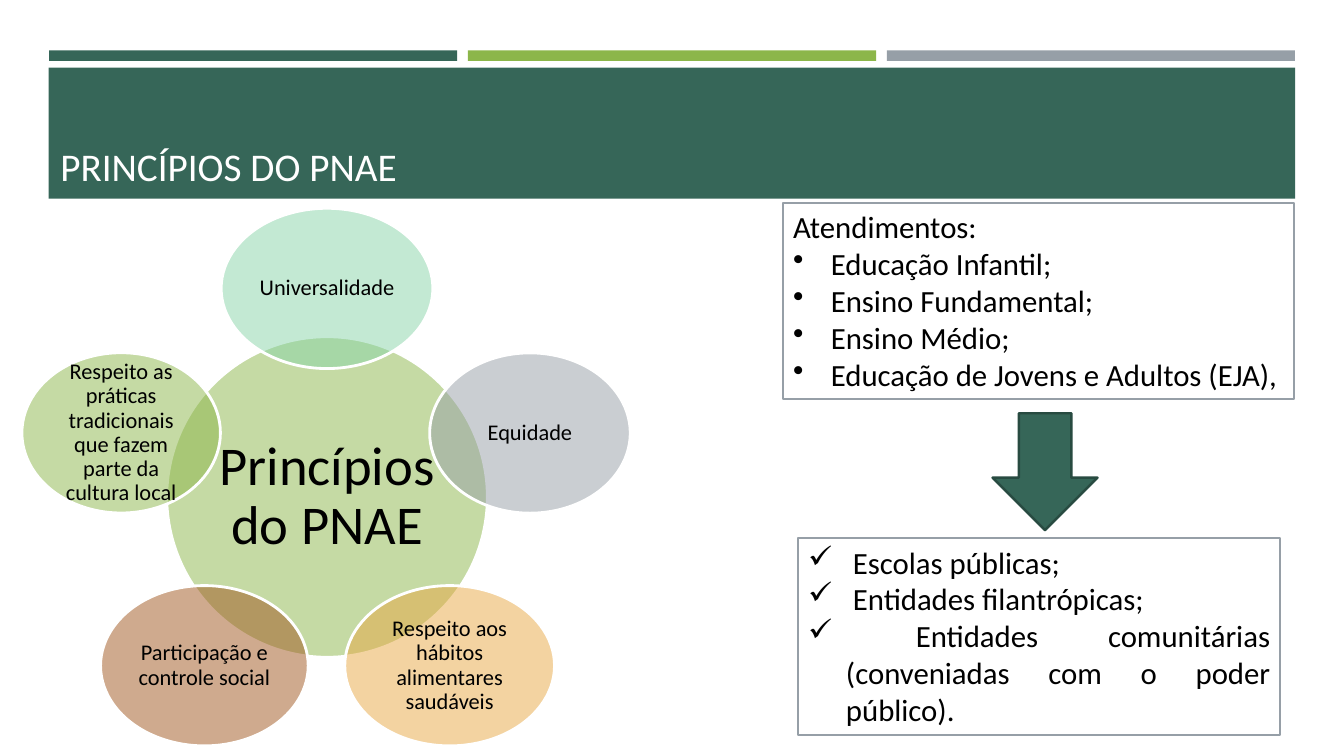
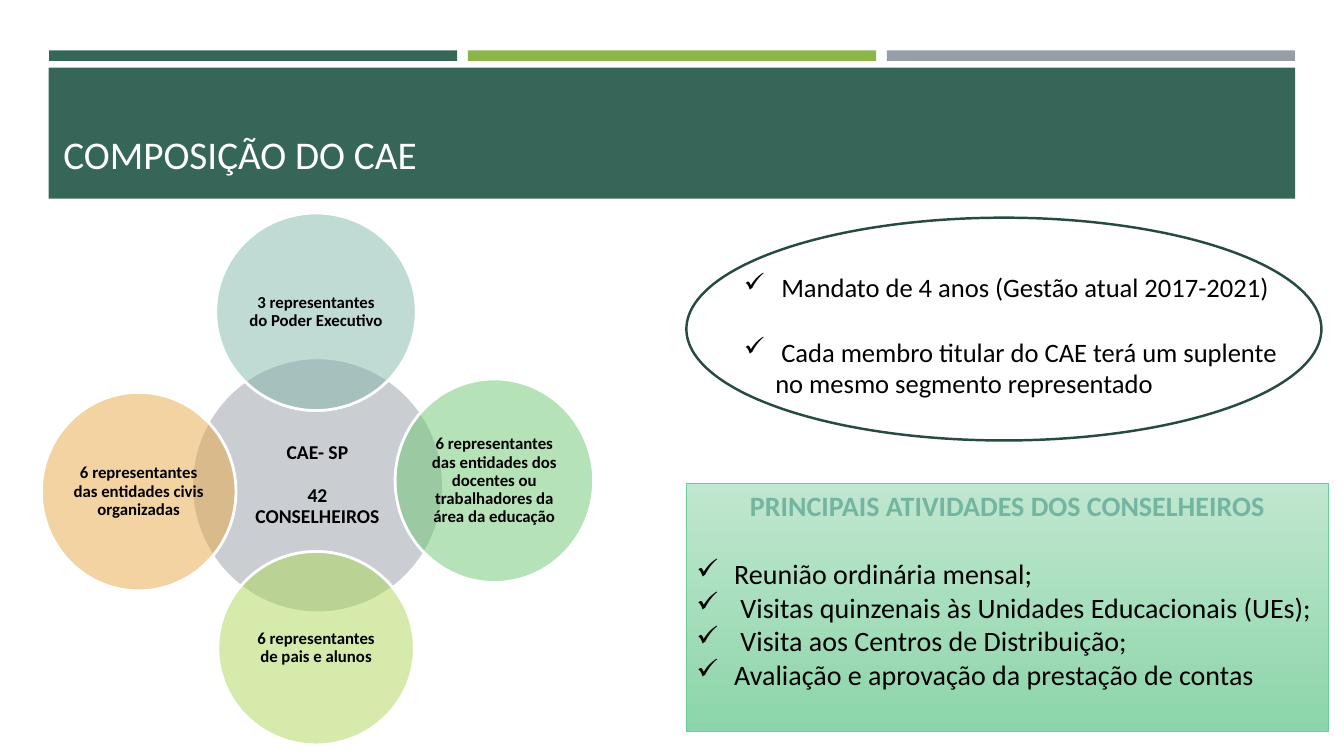
from math import cos, radians, sin

from lxml import etree
from pptx import Presentation
from pptx.dml.color import RGBColor
from pptx.enum import shapes, text
from pptx.oxml.ns import qn
from pptx.util import Pt

GREEN = RGBColor(0x36, 0x66, 0x58)
DARK_GREEN = RGBColor(0x28, 0x4B, 0x41)
LIME = RGBColor(0x8C, 0xB6, 0x4A)
LIGHT_LIME = RGBColor(0xAE, 0xD7, 0x5A)
GRAY = RGBColor(0x96, 0x9F, 0xA7)
MINT = RGBColor(0x88, 0xD5, 0xA9)
TEAL = RGBColor(0x83, 0xB6, 0xAA)
LEAF = RGBColor(0x6E, 0xC6, 0x72)
AMBER = RGBColor(0xE8, 0xA8, 0x44)
BROWN = RGBColor(0xA1, 0x56, 0x1F)
PALE_MINT = RGBColor(0xC0, 0xE7, 0xCF)
SOFT_MINT = RGBColor(0x8C, 0xD5, 0xAA)
MINT_EDGE = RGBColor(0x6E, 0xCC, 0x96)
HEADING_TEAL = RGBColor(0x74, 0xB5, 0xA2)
WHITE = RGBColor(0xFF, 0xFF, 0xFF)
BLACK = RGBColor(0, 0, 0)

FONT = "Calibri"
DOT, CHECK = "•", "✓"
RECT, OVAL = shapes.MSO_SHAPE.RECTANGLE, shapes.MSO_SHAPE.OVAL
ALIGN = text.PP_ALIGN

# Satellites: text, colour, clockwise angle from the top, distance, width, height
PRINCIPLES = dict(
    center=(233.6, 355), hub=("Princípios do PNAE", LIME, 229, 229), hub_size=39,
    size=16, bold=False, hub_gap=0,
    satellites=[
        ("Universalidade", MINT, 0, 149, 151.2, 114.5),
        ("Equidade", GRAY, 72.5, 152, 143.3, 114.5),
        ("Respeito aos hábitos alimentares saudáveis", AMBER, 144, 149, 149.8, 114.5),
        ("Participação e controle social", BROWN, 216, 149, 148.3, 114.5),
        ("Respeito as práticas tradicionais que fazem parte da cultura local",
         LIME, 287.3, 154, 141.8, 114.5),
    ])
COUNCIL = dict(
    center=(226.8, 346.7), hub=("CAE- SP\n42\nCONSELHEIROS", GRAY, 180, 182.2), hub_size=14,
    size=12, bold=True, hub_gap=15,
    satellites=[
        ("3 representantes do Poder Executivo", TEAL, 359.5, 124, 143.3, 141.1),
        ("6 representantes das entidades dos docentes ou trabalhadores da área da educação",
         LEAF, 88.5, 126.4, 141.8, 145.4),
        ("6 representantes de pais e alunos", LIGHT_LIME, 180.5, 116.3, 140.4, 138.2),
        ("6 representantes das entidades civis organizadas", AMBER, 268, 127.8, 139, 141.8),
    ])

# Panel lines: text, bullet, space before
SERVED = [
    ("Atendimentos:", None, 0),
    ("Educação Infantil;", DOT, 0),
    ("Ensino Fundamental;", DOT, 0),
    ("Ensino Médio;", DOT, 0),
    ("Educação de Jovens e Adultos (EJA),", DOT, 0),
]
INSTITUTIONS = [
    (" Escolas públicas;", CHECK, 0),
    (" Entidades filantrópicas;", CHECK, 0),
    (" Entidades comunitárias (conveniadas com o poder público).", CHECK, 0),
]
MANDATE = [
    (" Mandato de 4 anos (Gestão atual 2017-2021)", CHECK, 0),
    (" Cada membro titular do CAE terá um suplente no mesmo segmento representado", CHECK, 23.2),
]
ACTIVITIES = [
    ("PRINCIPAIS ATIVIDADES DOS CONSELHEIROS", None, 0),
    ("Reunião ordinária mensal;", CHECK, 24.4),
    (" Visitas quinzenais às Unidades Educacionais (UEs);", CHECK, 0),
    (" Visita aos Centros de Distribuição;", CHECK, 0),
    ("Avaliação e aprovação da prestação de contas", CHECK, 0),
]


def add_figure(slide, kind, box, fill=None, edge=None, weight=0):
    figure = slide.shapes.add_shape(kind, *map(Pt, box))
    figure.shadow.inherit = False
    if fill is None:
        figure.fill.background()
    else:
        figure.fill.solid()
        figure.fill.fore_color.rgb = fill
    if edge is None:
        figure.line.fill.background()
    else:
        figure.line.color.rgb = edge
        figure.line.width = Pt(weight)
    return figure


def format_paragraph(paragraph, size, color=BLACK, bold=False, align=ALIGN.LEFT):
    paragraph.alignment = align
    for run in paragraph.runs:
        run.font.name = FONT
        run.font.size = Pt(size)
        run.font.bold = bold
        run.font.color.rgb = color


def add_bullet(paragraph, mark, indent):
    props = paragraph._p.get_or_add_pPr()
    props.set("marL", str(Pt(indent)))
    props.set("indent", str(-Pt(indent)))
    etree.SubElement(props, qn("a:buChar")).set("char", mark)


def add_panel(slide, box, lines, size, align=ALIGN.LEFT, indent=27, fill=WHITE, edge=None, weight=1.5):
    panel = add_figure(slide, RECT, box, fill, edge, weight)
    frame = panel.text_frame
    frame.word_wrap = True
    frame.vertical_anchor = text.MSO_ANCHOR.TOP
    frame.text = "\n".join(line for line, _, _ in lines)
    for paragraph, (_, mark, gap) in zip(frame.paragraphs, lines):
        format_paragraph(paragraph, size, align=align)
        paragraph.space_before = Pt(gap)
        if mark:
            add_bullet(paragraph, mark, indent)
    return panel


def add_bubble(slide, center, label, color, width, height, size, bold, gap=0):
    """Half-transparent ellipse; gap is the space before its second paragraph."""
    x, y = center
    bubble = add_figure(slide, OVAL, (x - width / 2, y - height / 2, width, height), color, WHITE, 2)
    tint = bubble.element.spPr.find(qn("a:solidFill")).find(qn("a:srgbClr"))
    etree.SubElement(tint, qn("a:alpha")).set("val", "50000")
    frame = bubble.text_frame
    frame.word_wrap = True
    frame.vertical_anchor = text.MSO_ANCHOR.MIDDLE
    frame.margin_left = frame.margin_right = frame.margin_top = frame.margin_bottom = Pt(1.4)
    frame.text = label
    for index, paragraph in enumerate(frame.paragraphs):
        format_paragraph(paragraph, size, bold=bold, align=ALIGN.CENTER)
        paragraph.line_spacing = 0.9
        if index == 1:
            paragraph.space_before = Pt(gap)


def add_radial(slide, radial):
    x, y = radial["center"]
    add_bubble(slide, (x, y), *radial["hub"], radial["hub_size"], radial["bold"], radial["hub_gap"])
    for label, color, angle, distance, width, height in radial["satellites"]:
        turn = radians(angle)
        center = (x + distance * sin(turn), y - distance * cos(turn))
        add_bubble(slide, center, label, color, width, height, radial["size"], radial["bold"])


def add_titled_slide(deck, title, left, top):
    slide = deck.slides.add_slide(deck.slide_layouts[6])
    for index, color in enumerate((GREEN, LIME, GRAY)):
        add_figure(slide, RECT, (35 + index * 299.2, 36, 291.6, 7.5), color)
    add_figure(slide, RECT, (34.8, 48.4, 890.4, 93.6), GREEN)
    heading = slide.shapes.add_textbox(Pt(left), Pt(top), Pt(868), Pt(80)).text_frame
    heading.word_wrap = True
    heading.vertical_anchor = text.MSO_ANCHOR.BOTTOM
    heading.text = title
    format_paragraph(heading.paragraphs[0], 28, WHITE)
    return slide


def build_principles(deck):
    slide = add_titled_slide(deck, "PRINCÍPIOS DO PNAE", 36, 59)
    add_panel(slide, (559.4, 144.7, 365, 140.4), SERVED, 22, ALIGN.JUSTIFY, edge=GRAY)
    add_figure(slide, shapes.MSO_SHAPE.DOWN_ARROW, (709, 295.2, 75, 83.5), GREEN, DARK_GREEN, 1.75)
    add_panel(slide, (570.2, 384.5, 344.2, 140.4), INSTITUTIONS, 22, ALIGN.JUSTIFY, edge=GRAY)
    add_radial(slide, PRINCIPLES)


def build_council(deck):
    slide = add_titled_slide(deck, "COMPOSIÇÃO DO CAE", 38.2, 50.4)
    add_radial(slide, COUNCIL)
    add_panel(slide, (524.2, 190.1, 405.4, 99.4), MANDATE, 19, indent=22.5)
    activities = add_panel(slide, (490.3, 345.6, 458.6, 177.1), ACTIVITIES, 20, edge=MINT_EDGE, weight=1)
    activities.fill.gradient()
    activities.fill.gradient_angle = 270
    for stop, color in zip(activities.fill.gradient_stops, (PALE_MINT, SOFT_MINT)):
        stop.color.rgb = color
    format_paragraph(activities.text_frame.paragraphs[0], 20, HEADING_TEAL, True, ALIGN.CENTER)
    add_figure(slide, OVAL, (490.3, 155.5, 453.6, 159.1), edge=DARK_GREEN, weight=1.75)


def main():
    deck = Presentation()
    deck.slide_width, deck.slide_height = Pt(960), Pt(540)
    build_principles(deck)
    build_council(deck)
    deck.save("out.pptx")


if __name__ == "__main__":
    main()
